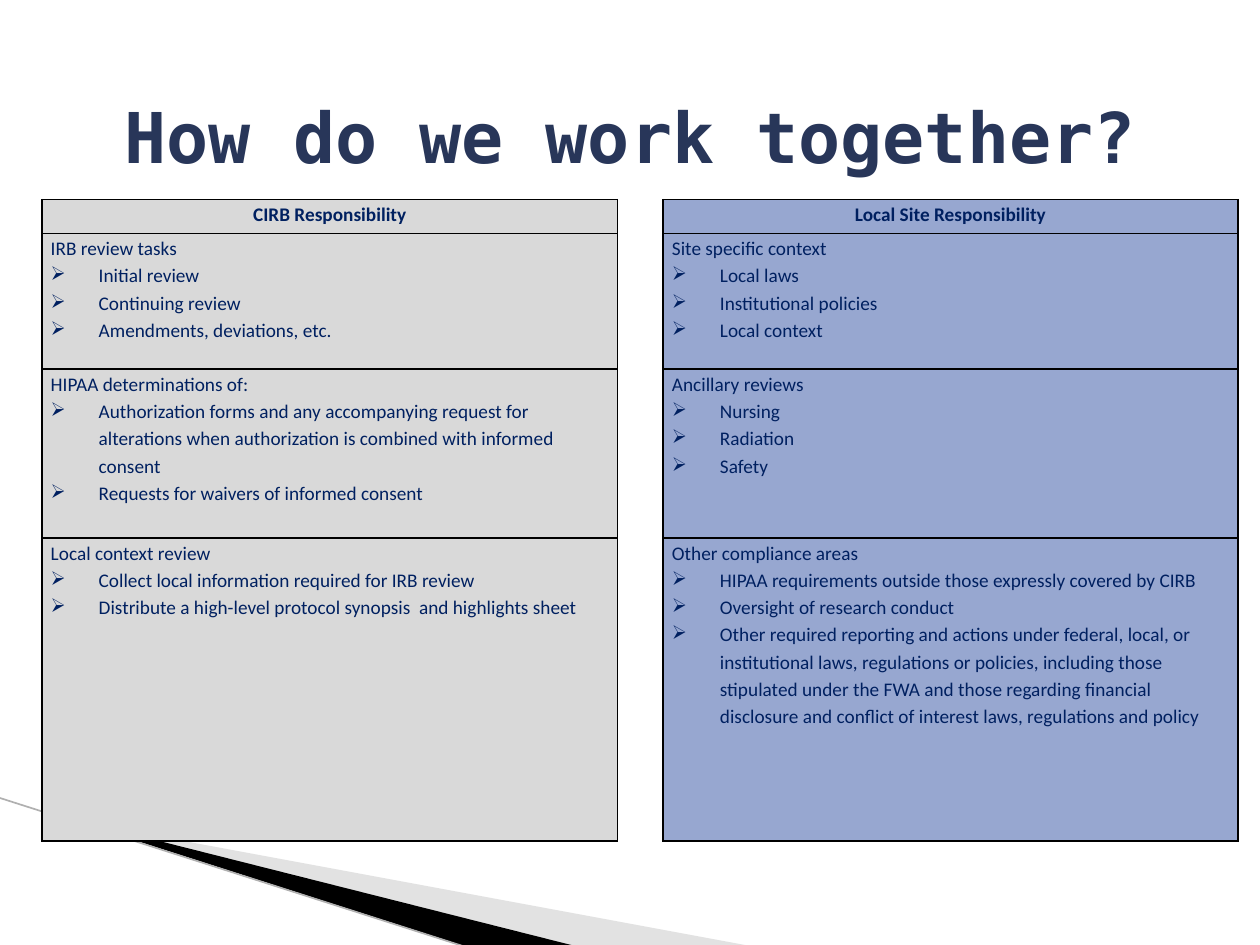
from dataclasses import dataclass

from lxml.etree import SubElement
from pptx import Presentation
from pptx.dml.color import RGBColor as Color
from pptx.enum.shapes import MSO_CONNECTOR as Connector
from pptx.enum.text import MSO_ANCHOR as Anchor, MSO_AUTO_SIZE as AutoSize, PP_ALIGN as Align
from pptx.oxml.ns import qn
from pptx.util import Pt


@dataclass(frozen=True)
class Theme:
    title_font: str = "DejaVu Sans Mono"
    body_font: str = "Calibri"
    title_size: float = 40
    body_size: float = 11
    title: str = "283659"
    body: str = "002060"
    left_fill: str = "D9D9D9"
    right_fill: str = "97A7D0"
    border: str = "000000"
    swoosh_dark: str = "000000"
    swoosh_light: str = "B8B8B8"
    swoosh_line: str = "B0B0B0"


@dataclass(frozen=True)
class Topic:
    heading: str
    bullets: tuple[str, ...] = ()


@dataclass(frozen=True)
class Column:
    title: str
    fill: str
    topics: tuple[Topic, ...]


@dataclass(frozen=True)
class Wedge:
    points: tuple[tuple[float, float], ...]
    fill: str
    opacity: int = 100


THEME = Theme()
INDENT = 27.4
COLUMN_WIDTHS = (329, 26, 328.5)
ROW_HEIGHTS = (19.5, 77.5, 96.5, 173)

WEDGES = (
    Wedge(((39.6, 468.5), (428.4, 540.5), (328.3, 540.5), (39.6, 468)), THEME.swoosh_light, 40),
    Wedge(((38.2, 467.3), (329, 540.7), (267.8, 541.4), (38.9, 468)), THEME.swoosh_dark),
)

CIRB = Column("CIRB Responsibility", THEME.left_fill, (
    Topic("IRB review tasks",
          ("Initial review", "Continuing review", "Amendments, deviations, etc.")),
    Topic("HIPAA determinations of:",
          ("Authorization forms and any accompanying request for alterations when "
           "authorization is combined with informed consent",
           "Requests for waivers of informed consent")),
    Topic("Local context review",
          ("Collect local information required for IRB review",
           "Distribute a high-level protocol synopsis  and highlights sheet")),
))
LOCAL_SITE = Column("Local Site Responsibility", THEME.right_fill, (
    Topic("Site specific context", ("Local laws", "Institutional policies", "Local context")),
    Topic("Ancillary reviews", ("Nursing", "Radiation", "Safety")),
    Topic("Other compliance areas",
          ("HIPAA requirements outside those expressly covered by CIRB",
           "Oversight of research conduct",
           "Other required reporting and actions under federal, local, or institutional laws, "
           "regulations or policies, including those stipulated under the FWA and those "
           "regarding financial disclosure and conflict of interest laws, regulations and policy")),
))


def draw_wedge(slide, wedge: Wedge) -> None:
    start, *rest = [(Pt(x), Pt(y)) for x, y in wedge.points]
    builder = slide.shapes.build_freeform(*start, scale=1.0)
    builder.add_line_segments(rest, close=True)
    shape = builder.convert_to_shape()
    shape.shadow.inherit = False
    shape.fill.solid()
    shape.fill.fore_color.rgb = Color.from_string(wedge.fill)
    shape.line.fill.background()
    if wedge.opacity < 100:
        color = next(shape.element.spPr.iter(qn("a:srgbClr")))
        SubElement(color, qn("a:alpha"), val=str(wedge.opacity * 1000))


def draw_swoosh_line(slide) -> None:
    line = slide.shapes.add_connector(Connector.STRAIGHT, Pt(-0.7), Pt(455.8), Pt(267), Pt(541.4))
    line.line.color.rgb = Color.from_string(THEME.swoosh_line)
    line.line.width = Pt(0.95)
    SubElement(line.element.spPr, qn("a:effectLst"))


def format_title(slide, text: str) -> None:
    title = slide.shapes.title
    title.left, title.top, title.width, title.height = Pt(36), Pt(60), Pt(648), Pt(34.5)
    frame = title.text_frame
    frame.text = text
    frame.auto_size = AutoSize.NONE
    frame.vertical_anchor = Anchor.MIDDLE
    para = frame.paragraphs[0]
    para.alignment = Align.CENTER
    para.font.name, para.font.size, para.font.bold = THEME.title_font, Pt(THEME.title_size), True
    para.font.color.rgb = Color.from_string(THEME.title)


def set_borders(cell, visible: str) -> None:
    """Draw the sides named in visible and clear the others."""
    properties = cell._tc.get_or_add_tcPr()
    for side in "LRTB":
        line = SubElement(properties, qn(f"a:ln{side}"), w=str(Pt(1)))
        if side in visible:
            fill = SubElement(line, qn("a:solidFill"))
            SubElement(fill, qn("a:srgbClr"), val=THEME.border)
        else:
            SubElement(line, qn("a:noFill"))


def format_para(para, bold: bool = False, bullet: bool = False) -> None:
    para.line_spacing = 1.15
    para.alignment = Align.CENTER if bold else Align.LEFT
    if bullet:
        properties = para._p.get_or_add_pPr()
        properties.set("marL", str(Pt(INDENT)))
        properties.set("indent", str(-Pt(INDENT)))
        SubElement(properties, qn("a:buChar"), char="➢")
    font = para.font
    font.name, font.size, font.bold = THEME.body_font, Pt(THEME.body_size), bold
    font.color.rgb = Color.from_string(THEME.body)


def fill_cell(cell, topic: Topic, fill: str, header: bool) -> None:
    cell.margin_left = cell.margin_right = Pt(5)
    cell.margin_top = cell.margin_bottom = Pt(0)
    set_borders(cell, "LRTB")
    cell.fill.solid()
    cell.fill.fore_color.rgb = Color.from_string(fill)
    cell.text_frame.text = "\n".join((topic.heading, *topic.bullets))
    for index, para in enumerate(cell.text_frame.paragraphs):
        format_para(para, bold=header, bullet=index > 0)


def clear_gap_cell(cell) -> None:
    cell.margin_top = cell.margin_bottom = Pt(0)
    set_borders(cell, "LR")
    cell.fill.background()
    cell.text_frame.paragraphs[0].font.size = Pt(THEME.body_size)


def draw_table(slide, left: Column, right: Column) -> None:
    frame = slide.shapes.add_table(len(ROW_HEIGHTS), len(COLUMN_WIDTHS), Pt(24), Pt(114),
                                   Pt(sum(COLUMN_WIDTHS)), Pt(sum(ROW_HEIGHTS)))
    table = frame.table
    table.first_row = table.horz_banding = False
    for column, width in zip(table.columns, COLUMN_WIDTHS):
        column.width = Pt(width)
    for row, height in zip(table.rows, ROW_HEIGHTS):
        row.height = Pt(height)
        clear_gap_cell(row.cells[1])
    for position, column in ((0, left), (2, right)):
        for index, topic in enumerate((Topic(column.title), *column.topics)):
            fill_cell(table.cell(index, position), topic, column.fill, header=index == 0)


def main() -> None:
    deck = Presentation()
    deck.slide_width, deck.slide_height = Pt(720), Pt(540)
    slide = deck.slides.add_slide(deck.slide_layouts[5])

    # Corner swoosh behind the content
    for wedge in WEDGES:
        draw_wedge(slide, wedge)
    draw_swoosh_line(slide)

    # Title and responsibilities
    format_title(slide, "How do we work together?")
    draw_table(slide, CIRB, LOCAL_SITE)
    deck.save("out.pptx")


if __name__ == "__main__":
    main()
